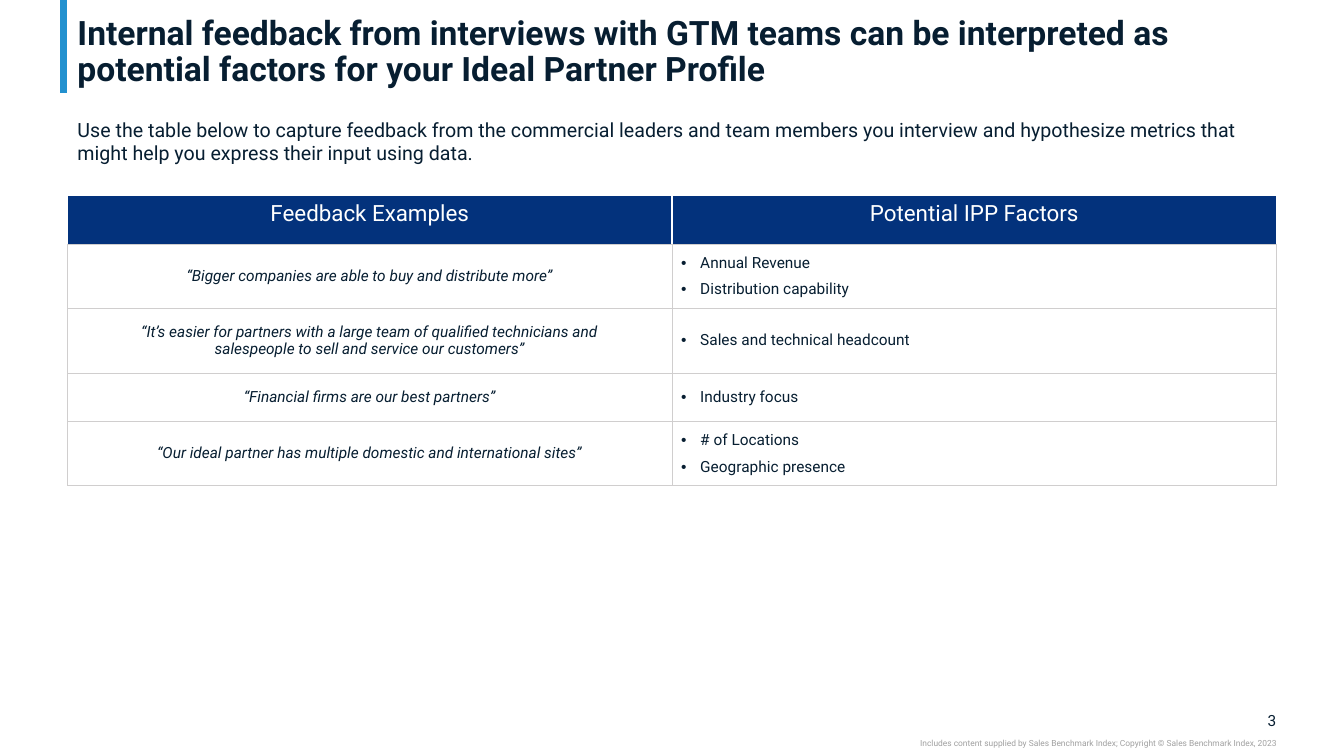
from lxml.etree import SubElement
from pptx import Presentation
from pptx.dml.color import RGBColor as RGB
from pptx.enum.shapes import MSO_CONNECTOR as Link
from pptx.enum.text import MSO_ANCHOR as Anchor, PP_ALIGN as Align
from pptx.oxml.ns import qn
from pptx.util import Inches, Pt

WIDE, HIGH = 13.33, 7.5
LEFT, SPAN = 0.67, 11.99
FONT = "Roboto"
INK = RGB(0x07, 0x1E, 0x31)
NAVY = RGB(0x03, 0x32, 0x7C)
SKY = RGB(0x23, 0x91, 0xCF)
GRAY = RGB(0xA0, 0xA0, 0xA0)
RULE = RGB(0xD0, 0xCE, 0xCE)
WHITE = RGB(0xFF, 0xFF, 0xFF)

TITLE = ("Internal feedback from interviews with GTM teams can be interpreted as "
         "potential factors for your Ideal Partner Profile")
INTRO = ("Use the table below to capture feedback from the commercial leaders and team "
         "members you interview and hypothesize metrics that might help you express "
         "their input using data.")
CREDIT = ("Includes content supplied by Sales Benchmark Index; "
          "Copyright © Sales Benchmark Index, 2023")
HEADS = ["Feedback Examples", "Potential IPP Factors"]
ROWS = [
    (0.64, ["“Bigger companies are able to buy and distribute more”"],
     ["Annual Revenue", "Distribution capability"]),
    (0.64, ["“It’s easier for partners with a large team of qualified technicians and",
            "salespeople to sell and service our customers”"],
     ["Sales and technical headcount"]),
    (0.48, ["“Financial firms are our best partners”"], ["Industry focus"]),
    (0.64, ["“Our ideal partner has multiple domestic and international sites”"],
     ["# of Locations", "Geographic presence"]),
]
HEAD_ROW = 0.48


def add_run(para, text, size, color=INK, bold=False, italic=False):
    run = para.add_run()
    run.text = text
    font = run.font
    font.name, font.size, font.bold, font.italic = FONT, Pt(size), bold, italic
    font.color.rgb = color


def add_text(slide, box, text, size, color=INK, bold=False, align=Align.LEFT,
             anchor=Anchor.TOP, pad=(0, 0), lead=None):
    frame = slide.shapes.add_textbox(*map(Inches, box)).text_frame
    frame.word_wrap = True
    frame.vertical_anchor = anchor
    frame.margin_left = frame.margin_right = Inches(pad[0])
    frame.margin_top = frame.margin_bottom = Inches(pad[1])
    para = frame.paragraphs[0]
    para.alignment, para.line_spacing = align, lead
    add_run(para, text, size, color, bold)


def add_head(slide, box):
    left, top, width, height = box
    edge = Inches(left - 0.04)
    bar = slide.shapes.add_connector(Link.STRAIGHT, edge, 0, edge, Inches(0.92))
    bar.line.color.rgb, bar.line.width = SKY, Pt(5)
    SubElement(bar._element.spPr, qn("a:effectLst"))
    add_text(slide, (left, top, width, height), TITLE, 24, bold=True,
             anchor=Anchor.BOTTOM, pad=(0.1, 0), lead=0.9)


def add_foot(slide, box):
    left, top, width, height = box
    right = left + width
    add_text(slide, (right - 0.33, top, 0.33, 0.19), "3", 11,
             align=Align.RIGHT, anchor=Anchor.MIDDLE)
    add_text(slide, (right - 5.16, top + height - 0.1, 5.16, 0.1), CREDIT, 6,
             GRAY, align=Align.RIGHT)


def add_edges(cell, edges):
    props = cell._tc.get_or_add_tcPr()
    for side, (color, width) in edges.items():
        line = SubElement(props, qn(f"a:ln{side}"), w=str(Pt(width)))
        fill = SubElement(line, qn("a:solidFill"))
        SubElement(fill, qn("a:srgbClr"), val=str(color))


def fill_head(cell, text):
    add_edges(cell, {**dict.fromkeys("LRT", (WHITE, 1)), "B": (RULE, 0.5)})
    cell.fill.solid()
    cell.fill.fore_color.rgb = NAVY
    para = cell.text_frame.paragraphs[0]
    para.alignment = Align.CENTER
    add_run(para, text, 16, WHITE)


def fill_body(cell):
    add_edges(cell, dict.fromkeys("LRTB", (RULE, 0.5)))
    cell.fill.background()
    cell.vertical_anchor = Anchor.MIDDLE
    cell.margin_left = cell.margin_right = Inches(0.09)
    cell.margin_top = cell.margin_bottom = Inches(0.04)
    return cell.text_frame


def fill_quote(cell, lines):
    para = fill_body(cell).paragraphs[0]
    para.alignment = Align.CENTER
    for i, line in enumerate(lines):
        if i:
            para.add_line_break()
        add_run(para, line, 11, italic=True)


def fill_list(cell, items):
    frame = fill_body(cell)
    for i, item in enumerate(items):
        para = frame.add_paragraph() if i else frame.paragraphs[0]
        props = para._p.get_or_add_pPr()
        props.set("marL", str(Inches(0.19)))
        props.set("indent", str(-Inches(0.19)))
        SubElement(props, qn("a:buFont"), typeface="Arial")
        SubElement(props, qn("a:buChar"), char="•")
        if i:
            para.space_before = Pt(3)
        if i < len(items) - 1:
            para.space_after = Pt(3)
        add_run(para, item, 11)


def add_grid(slide, box):
    table = slide.shapes.add_table(len(ROWS) + 1, len(HEADS), *map(Inches, box)).table
    table.first_row = table.horz_banding = False
    for col, head in enumerate(HEADS):
        table.columns[col].width = Inches(box[2] / len(HEADS))
        fill_head(table.cell(0, col), head)
    table.rows[0].height = Inches(HEAD_ROW)
    for row, (height, quote, items) in enumerate(ROWS, 1):
        table.rows[row].height = Inches(height)
        fill_quote(table.cell(row, 0), quote)
        fill_list(table.cell(row, 1), items)


def main():
    deck = Presentation()
    deck.slide_width, deck.slide_height = Inches(WIDE), Inches(HIGH)
    slide = deck.slides.add_slide(deck.slide_layouts[6])
    add_head(slide, (LEFT, 0.04, SPAN, 0.84))
    add_text(slide, (LEFT, 1.12, SPAN, 0.57), INTRO, 14, pad=(0.1, 0.05))
    add_grid(slide, (LEFT, 1.94, SPAN, HEAD_ROW + sum(row[0] for row in ROWS)))
    add_foot(slide, (LEFT, 7.05, SPAN, 0.37))
    deck.save("out.pptx")


if __name__ == "__main__":
    main()
